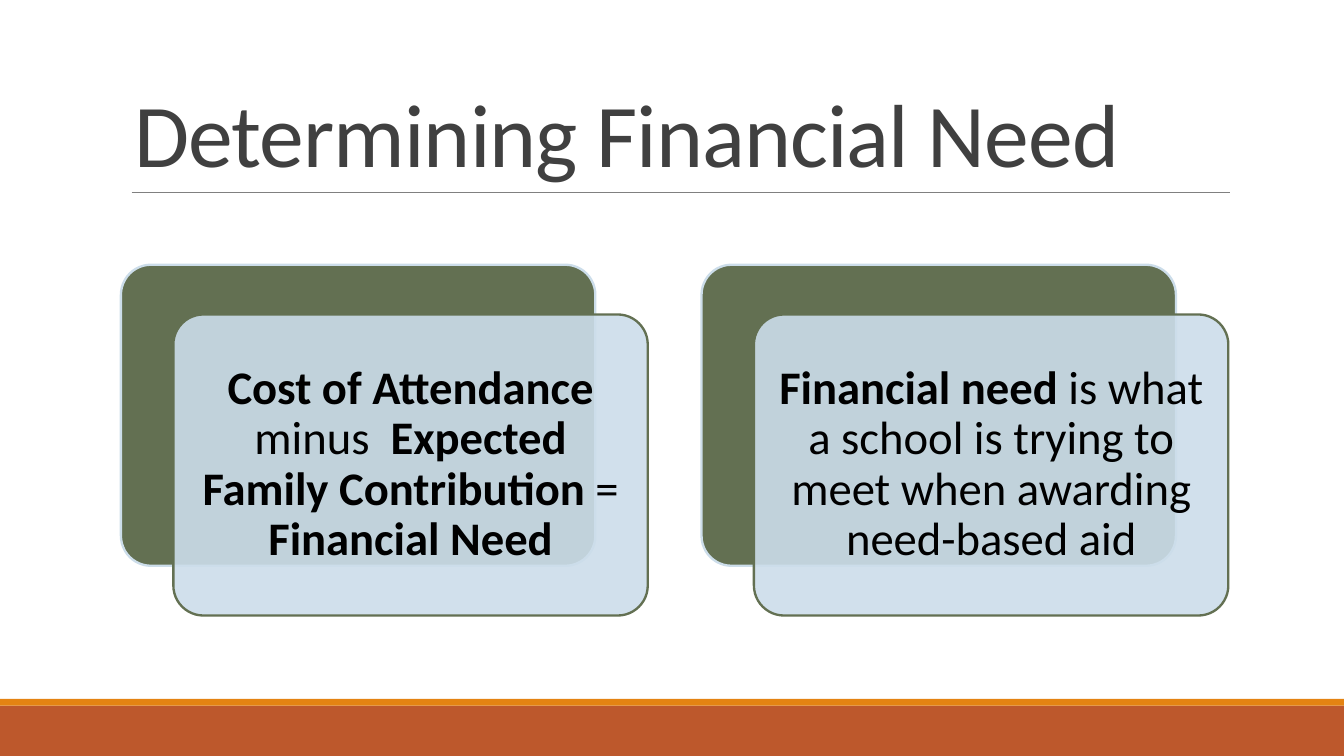
import pptx
import pptx.dml.color
import pptx.enum.shapes
import pptx.enum.text
import pptx.oxml
import pptx.oxml.ns
import pptx.util

Inches = pptx.util.Inches
Pt = pptx.util.Pt
MSO_SHAPE = pptx.enum.shapes.MSO_SHAPE
ANCHOR = pptx.enum.text.MSO_ANCHOR
ALIGN = pptx.enum.text.PP_ALIGN

SLIDE_W = 10
SLIDE_H = SLIDE_W * 9 / 16
BAR_TOP, STRIPE_H = 5.25, 0.05
FONT = "Calibri"
GREEN = "637052"
PALE_BLUE = "CCDDEA"
CARD_W, CARD_H = 3.53, 2.24
CARD_LEFT, CARD_TOP, CARD_PITCH = 0.9, 1.97, 4.32
FRONT_DX, FRONT_DY = 0.39, 0.37
TEXT_MARGIN = 0.07

# Each card is a list of (text, bold) runs.
CARDS = [
    [
        ("Cost of Attendance", True),
        (" minus  ", False),
        ("Expected Family Contribution", True),
        (" = ", False),
        ("Financial Need", True),
    ],
    [
        ("Financial need", True),
        (" is what a school is trying to meet when awarding need-based aid", False),
    ],
]


def rgb(color):
    return pptx.dml.color.RGBColor.from_string(color)


def box(x, y, w, h):
    return Inches(x), Inches(y), Inches(w), Inches(h)


def format_run(r, size, color, bold=False):
    r.font.name = FONT
    r.font.size = Pt(size)
    r.font.bold = bold
    r.font.color.rgb = rgb(color)


def add_filled(shapes, kind, bounds, fill, line=None):
    sp = shapes.add_shape(kind, *bounds)
    sp.shadow.inherit = False
    sp.fill.solid()
    sp.fill.fore_color.rgb = rgb(fill)
    if line:
        sp.line.color.rgb = rgb(line)
        sp.line.width = Pt(1.25)
    else:
        sp.line.fill.background()
    return sp


def add_panel(shapes, x, y, fill, line):
    bounds = box(x, y, CARD_W, CARD_H)
    sp = add_filled(shapes, MSO_SHAPE.ROUNDED_RECTANGLE, bounds, fill, line)
    sp.adjustments[0] = 0.1
    return sp


def set_opacity(sp, percent):
    color = sp._element.spPr.find("./" + pptx.oxml.ns.qn("a:solidFill"))[0]
    alpha = pptx.oxml.parse_xml(f'<a:alpha {pptx.oxml.ns.nsdecls("a")} val="{percent * 1000}"/>')
    color.append(alpha)


def add_rule(s, x1, x2, y):
    line = s.shapes.add_connector(
        pptx.enum.shapes.MSO_CONNECTOR.STRAIGHT, Inches(x1), Inches(y), Inches(x2), Inches(y)
    )
    line.line.color.rgb = rgb("808080")
    line.line.width = Pt(0.5)
    line._element.spPr.append(pptx.oxml.parse_xml(f'<a:effectLst {pptx.oxml.ns.nsdecls("a")}/>'))


def set_title(s, text):
    sp = s.shapes.title
    sp.left, sp.top, sp.width, sp.height = box(0.9, 0.24, 8.25, 1.19)
    tf = sp.text_frame
    tf.text = text
    tf.word_wrap = True
    tf.auto_size = pptx.enum.text.MSO_AUTO_SIZE.NONE
    tf.vertical_anchor = ANCHOR.BOTTOM
    p = tf.paragraphs[0]
    p.alignment = ALIGN.LEFT
    p.line_spacing = 0.85
    r = p.runs[0]
    format_run(r, 48, "404040")
    r._r.get_or_add_rPr().set("spc", "-50")


def add_card_text(shapes, x, y, runs):
    m = TEXT_MARGIN
    sp = shapes.add_textbox(*box(x + m, y + m, CARD_W - 2 * m, CARD_H - 2 * m))
    tf = sp.text_frame
    tf.word_wrap = True
    tf.vertical_anchor = ANCHOR.MIDDLE
    tf.margin_left = tf.margin_right = tf.margin_top = tf.margin_bottom = Inches(0.1)
    p = tf.paragraphs[0]
    p.alignment = ALIGN.CENTER
    p.line_spacing = 0.9
    for text, bold in runs:
        r = p.add_run()
        r.text = text
        format_run(r, 25, "000000", bold)


def add_card(s, x, y, runs):
    """Group a back panel, an offset translucent front panel and its text."""
    shapes = s.shapes.add_group_shape().shapes
    add_panel(shapes, x, y, GREEN, PALE_BLUE)
    front_x, front_y = x + FRONT_DX, y + FRONT_DY
    front = add_panel(shapes, front_x, front_y, PALE_BLUE, GREEN)
    set_opacity(front, 90)
    add_card_text(shapes, front_x, front_y, runs)


def main():
    prs = pptx.Presentation()
    prs.slide_width, prs.slide_height = Inches(SLIDE_W), Inches(SLIDE_H)
    s = prs.slides.add_slide(prs.slide_layouts[5])

    bar = box(0, BAR_TOP, SLIDE_W, SLIDE_H - BAR_TOP)
    stripe = box(0, BAR_TOP - STRIPE_H, SLIDE_W, STRIPE_H)
    add_filled(s.shapes, MSO_SHAPE.RECTANGLE, bar, "BD582C")
    add_filled(s.shapes, MSO_SHAPE.RECTANGLE, stripe, "E48312")
    add_rule(s, 0.98, 9.15, 1.43)
    set_title(s, "Determining Financial Need")
    for i, runs in enumerate(CARDS):
        add_card(s, CARD_LEFT + i * CARD_PITCH, CARD_TOP, runs)

    prs.save("out.pptx")


if __name__ == "__main__":
    main()
